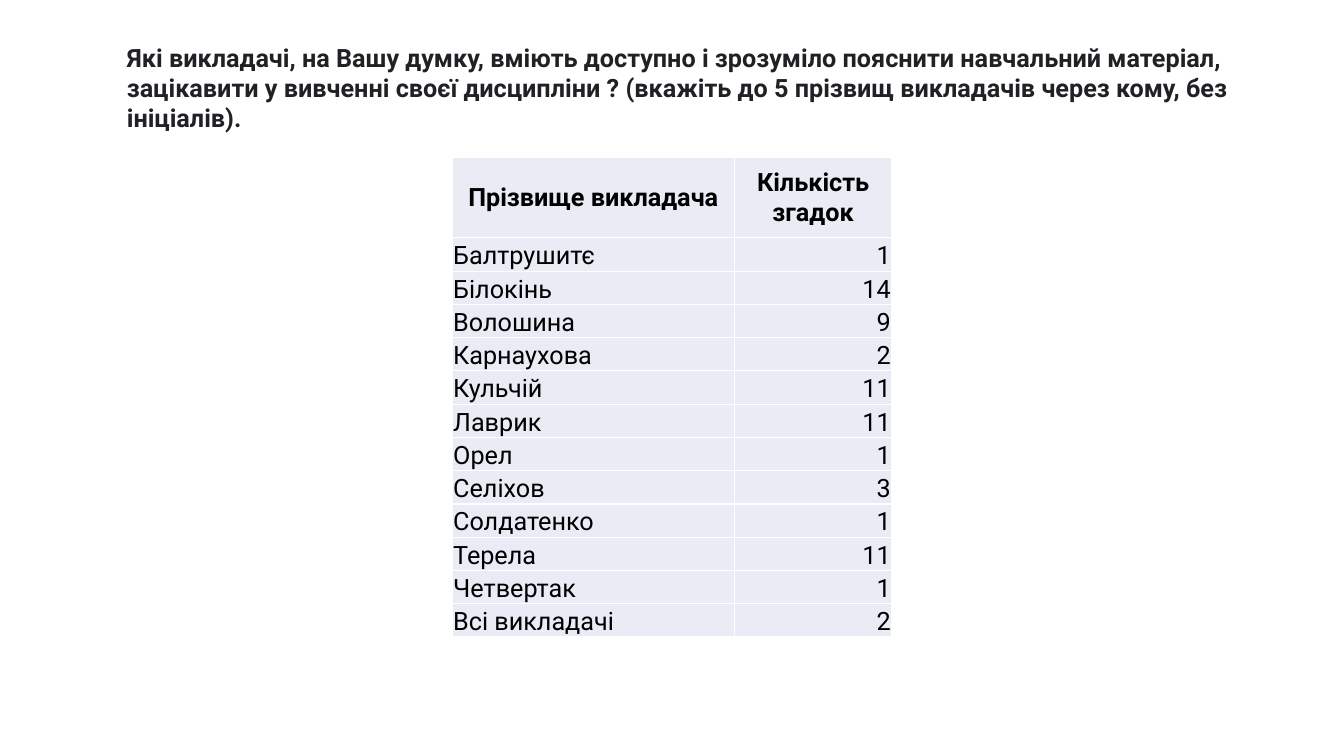
import pptx
import pptx.util
import pptx.dml.color
import pptx.enum.text
import lxml.etree
from pptx.oxml.ns import qn

WIDTH, HEIGHT = 13.33, 7.5
FONT = "Roboto"
COLUMNS = [2.8, 1.56]
HEADER_ROW, BODY_ROW = 0.8, 0.33
ALIGN = pptx.enum.text.PP_ALIGN
ANCHOR = pptx.enum.text.MSO_ANCHOR

QUESTION = (
    "Які викладачі, на Вашу думку, вміють доступно і зрозуміло пояснити навчальний матеріал, "
    "зацікавити у вивченні своєї дисципліни ? (вкажіть до 5 прізвищ викладачів через кому, "
    "без ініціалів)."
)
HEADERS = ("Прізвище викладача", "Кількість згадок")
MENTIONS = [
    ("Балтрушитє", 1),
    ("Білокінь", 14),
    ("Волошина", 9),
    ("Карнаухова", 2),
    ("Кульчій", 11),
    ("Лаврик", 11),
    ("Орел", 1),
    ("Селіхов", 3),
    ("Солдатенко", 1),
    ("Терела", 11),
    ("Четвертак", 1),
    ("Всі викладачі", 2),
]


def inches(value):
    return pptx.util.Inches(value)


def color(value):
    return pptx.dml.color.RGBColor.from_string(value)


def write(paragraph, text, text_color, bold, alignment):
    paragraph.text = text
    paragraph.alignment = alignment
    paragraph.font.name = FONT
    paragraph.font.size = pptx.util.Pt(18)
    paragraph.font.bold = bold
    paragraph.font.color.rgb = color(text_color)


def add_question(slide, left, top, width, height):
    box = slide.shapes.add_textbox(inches(left), inches(top), inches(width), inches(height))
    box.text_frame.word_wrap = True
    write(box.text_frame.paragraphs[0], QUESTION, "202124", True, ALIGN.LEFT)


def add_borders(cell, line_color):
    properties = cell._tc.get_or_add_tcPr()
    for side in ("a:lnL", "a:lnR", "a:lnT", "a:lnB"):
        line = lxml.etree.SubElement(properties, qn(side), w=str(pptx.util.Pt(1)))
        fill = lxml.etree.SubElement(line, qn("a:solidFill"))
        lxml.etree.SubElement(fill, qn("a:srgbClr"), val=line_color)


def fill_cell(cell, text, bold, alignment, anchor):
    add_borders(cell, "FFFFFF")
    cell.fill.solid()
    cell.fill.fore_color.rgb = color("E9EBF5")
    cell.margin_left = cell.margin_right = cell.margin_top = inches(0.01)
    cell.margin_bottom = 0
    cell.vertical_anchor = anchor
    write(cell.text_frame.paragraphs[0], text, "000000", bold, alignment)


def add_mentions_table(slide, left, top):
    heights = [HEADER_ROW] + [BODY_ROW] * len(MENTIONS)
    frame = slide.shapes.add_table(
        len(heights), len(COLUMNS), inches(left), inches(top),
        inches(sum(COLUMNS)), inches(sum(heights)),
    )
    table = frame.table
    for column, width in zip(table.columns, COLUMNS):
        column.width = inches(width)
    for row, height in zip(table.rows, heights):
        row.height = inches(height)
    for column, header in enumerate(HEADERS):
        fill_cell(table.cell(0, column), header, True, ALIGN.CENTER, ANCHOR.MIDDLE)
    for row, (surname, count) in enumerate(MENTIONS, start=1):
        fill_cell(table.cell(row, 0), surname, False, ALIGN.LEFT, ANCHOR.BOTTOM)
        fill_cell(table.cell(row, 1), str(count), False, ALIGN.RIGHT, ANCHOR.BOTTOM)


def main():
    presentation = pptx.Presentation()
    presentation.slide_width = inches(WIDTH)
    presentation.slide_height = inches(HEIGHT)
    slide = presentation.slides.add_slide(presentation.slide_layouts[6])
    add_question(slide, 1.16, 0.37, 11.16, 1.92)
    add_mentions_table(slide, (WIDTH - sum(COLUMNS)) / 2, 1.56)
    presentation.save("out.pptx")


if __name__ == "__main__":
    main()
